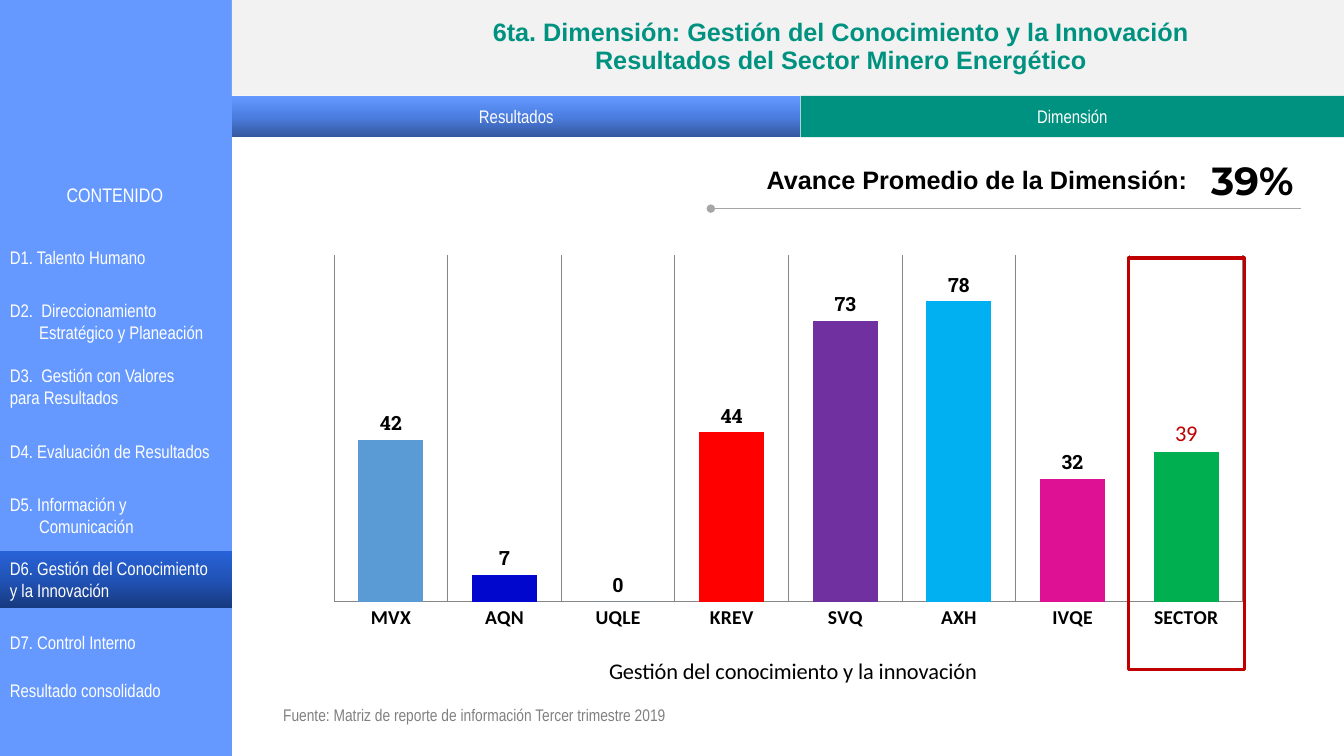
import copy

import pptx
import pptx.chart.data
import pptx.dml.color
import pptx.enum.chart
import pptx.enum.shapes
import pptx.enum.text
import pptx.oxml
import pptx.oxml.ns
import pptx.util

EMU_PER_PX = 9144  # 100 px to the inch
SLIDE_W, SLIDE_H = 1333, 750
SIDEBAR_W = 230

COLORS = {
    "sidebar": "6699FF", "header": "F2F2F2", "green": "009280", "white": "FFFFFF",
    "black": "000000", "rule": "A6A6A6", "source": "808080", "accent": "C00000",
    "grid": "868686",
}
RESULTS_GRADIENT = ("36589E", "4C7EE1", "6699FF")
ACTIVE_GRADIENT = ("173A80", "2153B6", "2862D7")

SHAPE = pptx.enum.shapes.MSO_SHAPE
ALIGN = pptx.enum.text.PP_ALIGN
ANCHOR = pptx.enum.text.MSO_ANCHOR

SCORES = {
    "MVX": (42, "5B9BD5"), "AQN": (7, "0207CE"), "UQLE": (0, "5B9BD5"),
    "KREV": (44, "FF0000"), "SVQ": (73, "7030A0"), "AXH": (78, "00B0F0"),
    "IVQE": (32, "DE1094"), "SECTOR": (39, "00B050"),
}
MENU = [  # top, hanging indent, text
    (227, 0, "D1. Talento Humano"),
    (291, 29, "D2.  Direccionamiento Estratégico y Planeación"),
    (355, 29, "D3.  Gestión con Valores\npara Resultados"),
    (420, 29, "D4. Evaluación de Resultados"),
    (483, 29, "D5. Información y Comunicación"),
    (547, 29, "D6. Gestión del Conocimiento\ny la Innovación"),
    (609, 29, "D7. Control Interno"),
    (657, 0, "Resultado consolidado"),
]
ACTIVE_TOPIC = "D6."


def px(length):
    return pptx.util.Emu(length * EMU_PER_PX)


def rgb(hex_color):
    return pptx.dml.color.RGBColor.from_string(hex_color)


def set_font(font, color, **formats):
    for name, value in formats.items():
        setattr(font, name, value)
    font.color.rgb = rgb(color)


def write(shape, text, size, color, face="Arial Narrow", bold=False,
          align=ALIGN.LEFT, anchor=ANCHOR.MIDDLE, hanging=0, spacing=None):
    frame = shape.text_frame
    frame.text = text
    frame_format = {"word_wrap": True, "vertical_anchor": anchor,
                    "auto_size": pptx.enum.text.MSO_AUTO_SIZE.NONE}
    for name, value in frame_format.items():
        setattr(frame, name, value)
    for paragraph in frame.paragraphs:
        paragraph.alignment = align
        paragraph.line_spacing = spacing
        if hanging:
            properties = paragraph._p.get_or_add_pPr()
            properties.set("marL", str(px(hanging)))
            properties.set("indent", str(px(-hanging)))
        for run in paragraph.runs:
            set_font(run.font, color, size=pptx.util.Pt(size), name=face, bold=bold)


def add_box(slide, box, fill=None, line=None, weight=1, kind=SHAPE.RECTANGLE):
    """Add a preset shape; a tuple as fill is a gradient from bottom to top."""
    shape = slide.shapes.add_shape(kind, *map(px, box))
    shape.shadow.inherit = False
    if isinstance(fill, tuple):
        shape.fill.gradient()
        shape.fill.gradient_angle = 90
        stops = shape.element.spPr.find(".//" + pptx.oxml.ns.qn("a:gsLst"))
        stops.insert(1, copy.deepcopy(stops[0]))
        for index, (stop, color) in enumerate(zip(shape.fill.gradient_stops, fill)):
            stop.color.rgb = rgb(color)
            stop.position = index / (len(fill) - 1)
    elif fill:
        shape.fill.solid()
        shape.fill.fore_color.rgb = rgb(fill)
    else:
        shape.fill.background()
    if line:
        shape.line.color.rgb = rgb(line)
        shape.line.width = pptx.util.Pt(weight)
    else:
        shape.line.fill.background()
    return shape


def add_text(slide, box, text, size, color, **formats):
    write(slide.shapes.add_textbox(*map(px, box)), text, size, color, **formats)


def place_manually(parent, x, y, w=None, h=None):
    """Give a chart title or plot area a fixed layout in fractions of the chart."""
    values = {"xMode": "edge", "yMode": "edge", "x": x, "y": y, "w": w, "h": h}
    target = '<c:layoutTarget val="inner"/>' if w else ""
    entries = "".join(f'<c:{k} val="{v}"/>' for k, v in values.items() if v is not None)
    layout = pptx.oxml.parse_xml(
        f'<c:layout {pptx.oxml.ns.nsdecls("c")}><c:manualLayout>{target}{entries}'
        "</c:manualLayout></c:layout>")
    for old in parent.findall(pptx.oxml.ns.qn("c:layout")):
        parent.remove(old)
    text = parent.find(pptx.oxml.ns.qn("c:tx"))
    if text is None:
        parent.insert(0, layout)
    else:
        text.addnext(layout)


def add_scores_chart(slide, box):
    left, top, width, height = box
    scores = pptx.chart.data.CategoryChartData(number_format="0")
    scores.categories = list(SCORES)
    scores.add_series("Series 1", [value for value, _ in SCORES.values()])
    chart = slide.shapes.add_chart(
        pptx.enum.chart.XL_CHART_TYPE.COLUMN_CLUSTERED, *map(px, box), scores).chart
    chart.has_legend = False
    set_font(chart.font, COLORS["black"], size=pptx.util.Pt(10), name="Calibri")

    chart.has_title = True
    chart.chart_title.include_in_layout = False
    caption = chart.chart_title.text_frame
    caption.text = "Gestión del conocimiento y la innovación"
    set_font(caption.paragraphs[0].runs[0].font, COLORS["black"],
             size=pptx.util.Pt(16), name="Calibri", bold=False)
    place_manually(chart.chart_title._element, 0.317, 0.882)
    place_manually(chart._chartSpace.chart.plotArea, 0.036, 0.045, 0.943, 0.732)

    entities = chart.category_axis
    entities.major_tick_mark = pptx.enum.chart.XL_TICK_MARK.NONE
    entities.has_major_gridlines = True
    for line in (entities.format.line, entities.major_gridlines.format.line):
        line.color.rgb = rgb(COLORS["grid"])
        line.width = pptx.util.Pt(0.75)
    set_font(entities.tick_labels.font, COLORS["black"], size=pptx.util.Pt(14), bold=True)
    axis_format = {"visible": False, "has_major_gridlines": False,
                   "minimum_scale": 0, "maximum_scale": 90}
    for name, value in axis_format.items():
        setattr(chart.value_axis, name, value)

    plot = chart.plots[0]
    plot.gap_width = 75
    plot.vary_by_categories = False
    columns = plot.series[0]
    outside = pptx.enum.chart.XL_LABEL_POSITION.OUTSIDE_END
    label_format = {"show_value": True, "position": outside,
                    "number_format": "0", "number_format_is_linked": False}
    for name, value in label_format.items():
        setattr(columns.data_labels, name, value)
    set_font(columns.data_labels.font, COLORS["black"],
             size=pptx.util.Pt(14), name="Roboto Slab", bold=True)
    for index, (_, color) in enumerate(SCORES.values()):
        fill = columns.points[index].format.fill
        fill.solid()
        fill.fore_color.rgb = rgb(color)

    sector_label = columns.points[len(SCORES) - 1].data_label
    sector_label.text_frame.text = str(SCORES["SECTOR"][0])
    sector_label.position = outside
    set_font(sector_label.text_frame.paragraphs[0].runs[0].font, COLORS["accent"],
             size=pptx.util.Pt(16), name="Calibri", bold=False)
    add_box(slide, (left + 822, top + 24, 115, 408), line=COLORS["accent"], weight=2.25)


def add_sidebar(slide, box):
    left, top, width, height = box
    add_box(slide, box, COLORS["sidebar"])
    heading = add_box(slide, (left - 1, top + 171, width, 44), kind=SHAPE.ROUNDED_RECTANGLE)
    write(heading, "CONTENIDO", 14, COLORS["white"], align=ALIGN.CENTER)
    for offset, hanging, topic in MENU:
        entry = (left, top + offset, width, 56)
        if topic.startswith(ACTIVE_TOPIC):
            write(add_box(slide, entry, ACTIVE_GRADIENT), topic, 13, COLORS["white"],
                  hanging=hanging)
        else:
            add_text(slide, entry, topic, 13, COLORS["white"], hanging=hanging)


def add_header(slide, box):
    left, top, width, height = box
    band = add_box(slide, (left, top, width, 95), COLORS["header"])
    title = slide.shapes.title
    band.element.addnext(title.element)
    title_place = {"left": left + 125, "top": top + 25, "width": 958, "height": 54}
    for name, value in title_place.items():
        setattr(title, name, px(value))
    write(title, "6ta. Dimensión: Gestión del Conocimiento y la Innovación\n"
          "Resultados del Sector Minero Energético", 18, COLORS["green"], face="Arial",
          bold=True, align=ALIGN.CENTER, anchor=ANCHOR.BOTTOM, spacing=0.9)
    tabs = (("Resultados", 0, 564, RESULTS_GRADIENT),
            ("Dimensión", 564, width - 564, COLORS["green"]))
    for name, offset, tab_width, fill in tabs:
        tab = add_box(slide, (left + offset, top + 95, tab_width, 41), fill)
        write(tab, name, 13, COLORS["white"], align=ALIGN.CENTER)


def add_average(slide, box):
    left, top, width, height = box
    add_text(slide, (left + 32, top + 8, 464, 40), "Avance Promedio de la Dimensión:", 18,
             COLORS["black"], face="Arial", bold=True, align=ALIGN.CENTER, anchor=ANCHOR.TOP)
    percentage = add_box(slide, (left + 477, top, 120, height), line=COLORS["white"])
    write(percentage, "39%", 28, COLORS["black"], face="Montserrat", bold=True,
          align=ALIGN.CENTER)
    rule = slide.shapes.add_connector(
        pptx.enum.shapes.MSO_CONNECTOR.STRAIGHT,
        *map(px, (left, top + height, left + width, top + height)))
    rule.line.color.rgb = rgb(COLORS["rule"])
    rule.line.width = pptx.util.Pt(0.5)
    namespace = pptx.oxml.ns.nsdecls("a")
    rule.line._get_or_add_ln().append(
        pptx.oxml.parse_xml(f'<a:headEnd {namespace} type="oval"/>'))
    rule.element.spPr.append(pptx.oxml.parse_xml(f"<a:effectLst {namespace}/>"))


def main():
    deck = pptx.Presentation()
    deck.slide_width, deck.slide_height = px(SLIDE_W), px(SLIDE_H)
    slide = deck.slides.add_slide(deck.slide_layouts[5])
    add_scores_chart(slide, (297, 232, 956, 470))
    add_sidebar(slide, (0, 0, SIDEBAR_W, SLIDE_H))
    add_header(slide, (SIDEBAR_W, 0, SLIDE_W - SIDEBAR_W, 136))
    add_average(slide, (705, 150, 585, 57))
    add_text(slide, (271, 695, 614, 28),
             "Fuente: Matriz de reporte de información Tercer trimestre 2019", 12,
             COLORS["source"])
    deck.save("out.pptx")


if __name__ == "__main__":
    main()
